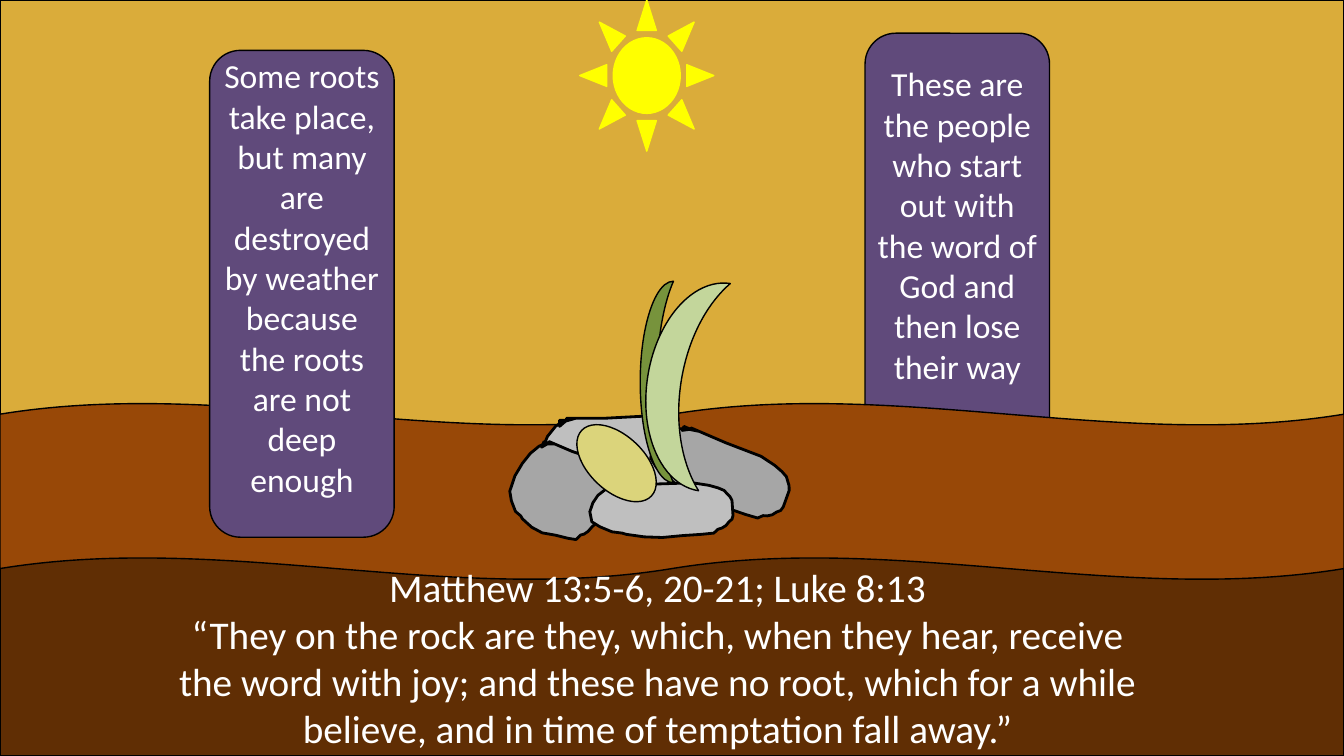
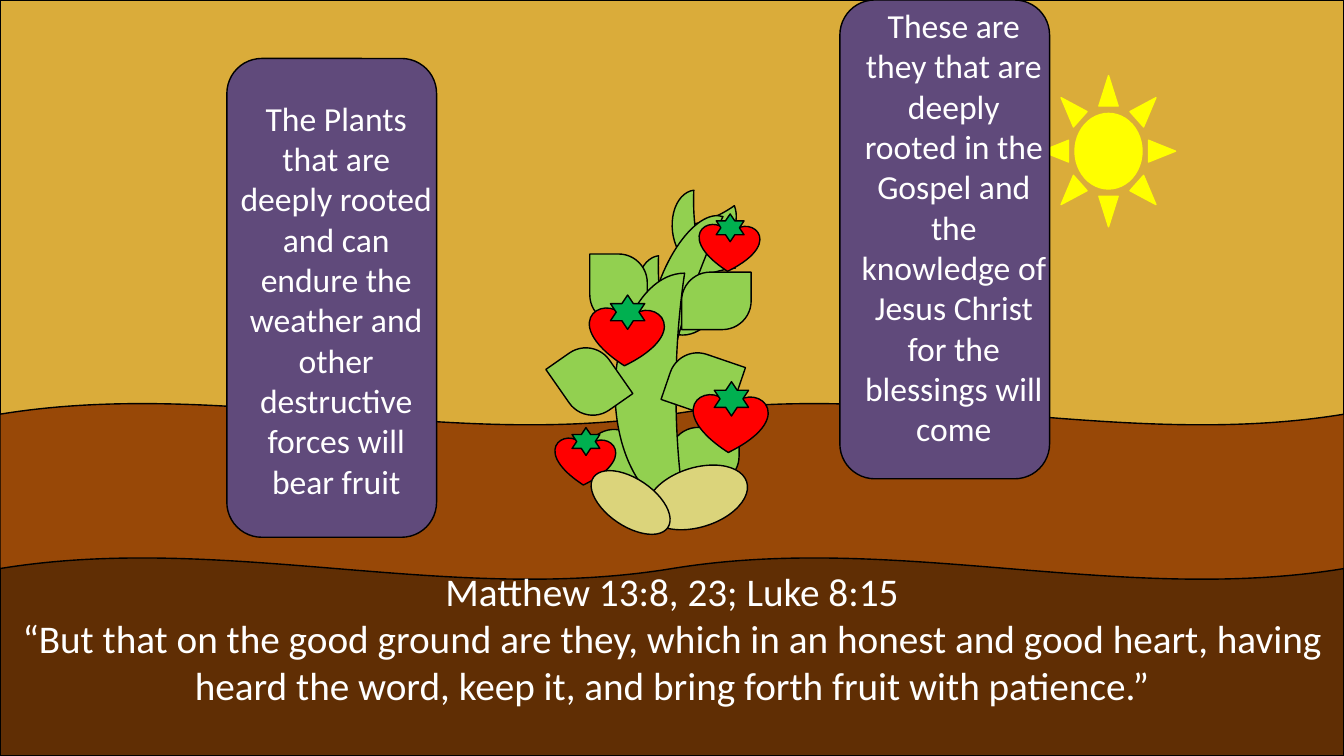
from pptx import Presentation
from pptx import util as u
from pptx.dml.color import RGBColor
from pptx.enum import shapes, text

SKY = RGBColor(0xDA, 0xAC, 0x3A)
TOPSOIL = RGBColor(0x98, 0x48, 0x07)
SUBSOIL = RGBColor(0x60, 0x2E, 0x04)
PURPLE = RGBColor(0x60, 0x4A, 0x7B)
SUNLIGHT = RGBColor(0xFF, 0xFF, 0x00)
SEED = RGBColor(0xDB, 0xD4, 0x7B)
LEAF = RGBColor(0x92, 0xD0, 0x50)
DARK_SHOOT = RGBColor(0x77, 0x93, 0x3C)
PALE_SHOOT = RGBColor(0xC3, 0xD6, 0x9B)
BERRY = RGBColor(0xFF, 0x00, 0x00)
SEPAL = RGBColor(0x00, 0xB0, 0x50)
LIGHT_ROCK = RGBColor(0xBF, 0xBF, 0xBF)
DARK_ROCK = RGBColor(0xA6, 0xA6, 0xA6)
BLACK = RGBColor(0x00, 0x00, 0x00)
WHITE = RGBColor(0xFF, 0xFF, 0xFF)

WIDTH, HEIGHT = 13.33, 7.5
ROCK_WIDTH, ROCK_HEIGHT = 142, 93
ROCK_OUTLINE = [
    (36, 2), (22, 6), (16, 10), (8, 20), (3, 32), (0, 46), (2, 62), (10, 70),
    (22, 78), (32, 80), (36, 82), (54, 86), (72, 87), (92, 84), (111, 82),
    (123, 80), (127, 74), (131, 72), (135, 68), (138, 62), (141, 58),
    (142, 52), (141, 28), (139, 22), (133, 12), (127, 8), (118, 4), (102, 0),
    (65, 2), (27, 2), (27, 4), (20, 4), (20, 10), (27, 4),
]
KIND = shapes.MSO_SHAPE


class Storyboard:
    font = "Calibri"

    def __init__(self):
        self.deck = Presentation()
        self.deck.slide_width = u.Inches(WIDTH)
        self.deck.slide_height = u.Inches(HEIGHT)
        self.slide = None

    def new_slide(self):
        self.slide = self.deck.slides.add_slide(self.deck.slide_layouts[6])

    def finish(self, item, fill, line=BLACK, weight=1, turn=0):
        item.shadow.inherit = False
        item.fill.solid()
        item.fill.fore_color.rgb = fill
        item.line.color.rgb = line
        item.line.width = u.Pt(weight)
        item.rotation = turn

    def figure(self, kind, box, fill, turn=0, line=BLACK, adjust=()):
        item = self.slide.shapes.add_shape(kind, *map(u.Inches, box))
        for index, value in enumerate(adjust):
            item.adjustments[index] = value
        self.finish(item, fill, line, turn=turn)

    def landscape(self, buried_panel=None):
        self.figure(KIND.RECTANGLE, (0, 0, WIDTH, 4.25), SKY)
        self.figure(KIND.RECTANGLE, (0, 5.08, WIDTH, 2.42), SUBSOIL)
        if buried_panel:
            self.panel(buried_panel)
        self.figure(KIND.DOUBLE_WAVE, (0, 4, WIDTH, 1.75), TOPSOIL)

    def panel(self, box):
        self.figure(KIND.ROUNDED_RECTANGLE, box, PURPLE)

    def sun(self, left, top):
        self.figure(KIND.SUN, (left, top, 1.33, 1.5), SUNLIGHT, line=SUNLIGHT)

    def seed(self, box, turn):
        self.figure(KIND.OVAL, box, SEED, turn)

    def stem(self, box, turn=0):
        self.figure(KIND.MOON, box, LEAF, turn, adjust=(0.875,))

    def leaf(self, left, top, turn=0):
        self.figure(KIND.ROUND_2_DIAG_RECTANGLE, (left, top, 0.69, 0.57),
                    LEAF, turn, adjust=(0.5, 0))

    def strawberry(self, left, top, width):
        self.figure(KIND.HEART, (left, top, width, 0.77 * width), BERRY, 3.4)
        sepal = 0.46 * width
        self.figure(KIND.STAR_6_POINT,
                    (left + 0.29 * width, top - 0.18 * width, sepal, sepal), SEPAL)

    def rock(self, box, fill, turn=0):
        left, top, width, height = map(u.Inches, box)
        start, *rest = ROCK_OUTLINE
        builder = self.slide.shapes.build_freeform(
            *start, scale=(width / ROCK_WIDTH, height / ROCK_HEIGHT))
        builder.add_line_segments(rest, close=False)
        self.finish(builder.convert_to_shape(left, top), fill, weight=2, turn=turn)

    def words(self, box, size, *lines):
        frame = self.slide.shapes.add_textbox(*map(u.Inches, box)).text_frame
        frame.word_wrap = True
        frame.auto_size = text.MSO_AUTO_SIZE.SHAPE_TO_FIT_TEXT
        frame.text = "\n".join(lines)
        for paragraph in frame.paragraphs:
            paragraph.alignment = text.PP_ALIGN.CENTER
            paragraph.font.name = self.font
            paragraph.font.size = u.Pt(size)
            paragraph.font.color.rgb = WHITE

    def message(self, box, wording):
        self.words(box, 24, wording)

    def verse(self, box, reference, quote):
        self.words(box, 28, reference, quote)


def stony_ground(board):
    board.new_slide()
    board.landscape(buried_panel=(8.58, 0.33, 1.83, 4.83))
    board.rock((5.35, 4.13, 1.42, 0.93), LIGHT_ROCK)
    board.rock((6.43, 4.38, 1.42, 0.67), DARK_ROCK, 23.2)
    board.rock((5.08, 4.44, 0.93, 0.94), DARK_ROCK, 23.2)
    board.rock((5.85, 4.79, 1.42, 0.58), LIGHT_ROCK)
    board.seed((5.64, 4.32, 0.95, 0.55), 43.3)
    board.figure(KIND.MOON, (6.35, 2.79, 0.33, 2), DARK_SHOOT)
    board.figure(KIND.MOON, (6.42, 2.75, 0.67, 2.08), PALE_SHOOT, 8.7)
    board.verse((1.52, 5.54, 10, 2.46), "Matthew 13:5-6, 20-21; Luke 8:13",
                "“They on the rock are they, which, when they hear, receive the word "
                "with joy; and these have no root, which for a while believe, and in "
                "time of temptation fall away.”")
    board.panel((2.08, 0.5, 1.83, 4.83))
    board.message((2.08, 0.5, 1.83, 4.54),
                  "Some roots take place, but many are destroyed by weather because "
                  "the roots are not deep enough")
    board.message((8.58, 0.58, 1.83, 3.33),
                  "These are the people who start out with the word of God and then "
                  "lose their way")
    board.sun(5.75, 0)


def good_ground(board):
    board.new_slide()
    board.landscape()
    board.sun(10.33, 0.75)
    for box, turn in [
        ((6.92, 1.99, 0.29, 0.58), 249),
        ((6.67, 1.9, 0.26, 0.77), 353),
        ((6.79, 2.32, 0.34, 0.58), 68.2),
        ((6.32, 2.55, 0.26, 0.77), 353),
        ((6.55, 2.85, 0.34, 0.58), 303.9),
        ((6.51, 2.04, 0.39, 1.75), 18.7),
    ]:
        board.stem(box, turn)
    for back_leaf in [(6.76, 2.7), (5.79, 2.58, 270), (6.64, 4.24), (5.79, 4.3, 41)]:
        board.leaf(*back_leaf)
    board.stem((6.1, 2.71, 0.69, 2.35))
    for front_leaf in [(6.63, 3.52, 18.9), (5.5, 3.5, 55.1)]:
        board.leaf(*front_leaf)
    for berry in [(6.87, 3.92, 0.74), (5.84, 3.06, 0.74),
                  (5.5, 4.35, 0.6), (6.93, 2.23, 0.6)]:
        board.strawberry(*berry)
    board.seed((6.4, 4.64, 1.03, 0.59), 342.6)
    board.seed((5.81, 4.75, 0.89, 0.47), 214)
    board.panel((2.25, 0.58, 2.08, 4.75))
    board.message((2.25, 0.92, 2.17, 4.14),
                  "The Plants that are deeply rooted and can endure the weather and "
                  "other destructive forces will bear fruit")
    board.panel((8.33, 0, 2.08, 4.75))
    board.message((8.42, 0, 2.08, 4.54),
                  "These are they that are deeply rooted in the Gospel and the "
                  "knowledge of Jesus Christ for the blessings will come")
    board.verse((0, 5.58, WIDTH, 1.51), "Matthew 13:8, 23; Luke 8:15",
                "“But that on the good ground are they, which in an honest and good "
                "heart, having heard the word, keep it, and bring forth fruit with "
                "patience.”")


def main():
    board = Storyboard()
    stony_ground(board)
    good_ground(board)
    board.deck.save("out.pptx")


if __name__ == "__main__":
    main()
